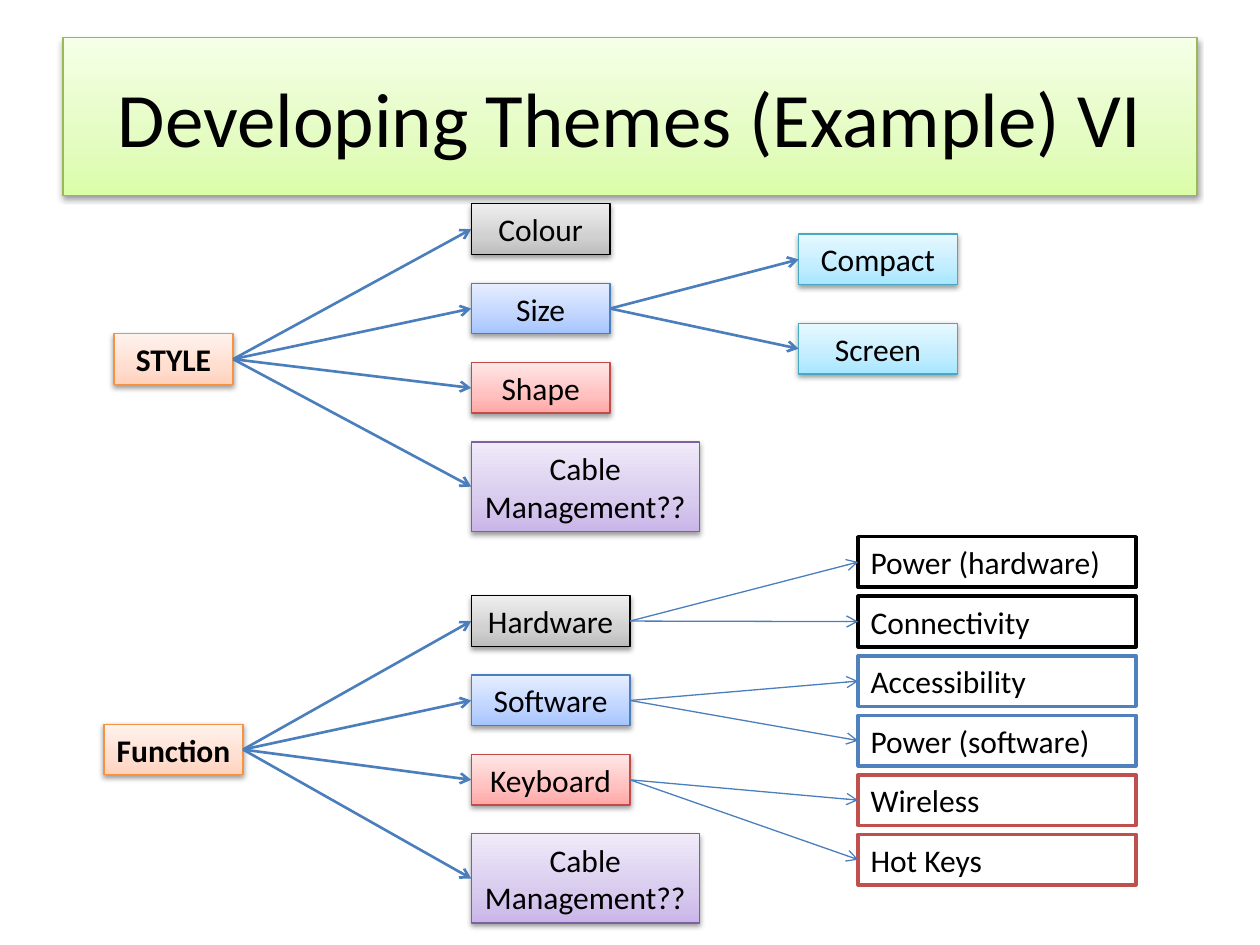
"""Build a slide that maps the themes of style and function as two trees."""
from copy import deepcopy

from lxml.etree import SubElement
from pptx import Presentation
from pptx.dml.color import RGBColor
from pptx.enum.shapes import MSO_CONNECTOR, MSO_SHAPE
from pptx.enum.text import MSO_ANCHOR, MSO_AUTO_SIZE, PP_ALIGN
from pptx.oxml.ns import qn
from pptx.util import Cm, Pt

COLORS = {
    "text": "000000", "arrow": "4B7EBC", "white": "FFFFFF",
    "black line": "000000", "blue line": "4F81BD", "red line": "C0504D",
    "green": ("DAFDA7", "E4FCC2", "F5FFE7", "98B955"),
    "orange": ("FFD2BD", "FFDED0", "FFF2ED", "F69240"),
    "grey": ("BDBDBD", "D1D1D1", "EEEEEE", "000000"),
    "blue": ("A4C4FF", "BFD4FF", "E6EEFF", "4B7EBC"),
    "red": ("FFA6A5", "FFC0BF", "FFE7E7", "BF4C48"),
    "purple": ("C9B5E8", "D8CBEE", "F0EAF9", "7D60A0"),
    "aqua": ("A7E6FF", "C1EDFF", "E7F8FF", "46AAC5"),
}

prs = Presentation()
prs.slide_width, prs.slide_height = Cm(25.4), Cm(19.05)
s = prs.slides.add_slide(prs.slide_layouts[5])


def add_box(text, x, y, w, h=1.02, color="grey", sp=None, size=18,
            bold=False, align=PP_ALIGN.CENTER, wrap=True):
    box = Cm(x), Cm(y), Cm(w), Cm(h)
    if sp is None:
        sp = s.shapes.add_shape(MSO_SHAPE.RECTANGLE, *box)
        sp.text_frame.auto_size = MSO_AUTO_SIZE.SHAPE_TO_FIT_TEXT
    else:
        sp.left, sp.top, sp.width, sp.height = box
    sp.shadow.inherit = False
    if color.endswith("line"):
        sp.fill.solid()
        sp.fill.fore_color.rgb = RGBColor.from_string(COLORS["white"])
        edge, width = COLORS[color], 2
    else:
        *shades, edge = COLORS[color]
        width = 0.75
        sp.fill.gradient()
        sp.fill.gradient_angle = 90
        stops = sp._element.spPr.find(qn("a:gradFill")).find(qn("a:gsLst"))
        stops.append(deepcopy(stops[0]))
        for stop, place, shade in zip(sp.fill.gradient_stops, (0, 0.35, 1), shades):
            stop.position = place
            stop.color.rgb = RGBColor.from_string(shade)
        shadow = SubElement(sp._element.spPr.find(qn("a:effectLst")), qn("a:outerShdw"),
                            blurRad="40000", dist="20000", dir="5400000", rotWithShape="0")
        black = SubElement(shadow, qn("a:srgbClr"), val="000000")
        SubElement(black, qn("a:alpha"), val="38000")
    sp.line.color.rgb = RGBColor.from_string(edge)
    sp.line.width = Pt(width)
    tf = sp.text_frame
    tf.word_wrap = wrap
    tf.vertical_anchor = MSO_ANCHOR.MIDDLE
    p = tf.paragraphs[0]
    p.alignment = align
    r = p.add_run()
    r.text = text
    r.font.name, r.font.size, r.font.bold = "Calibri", Pt(size), bold
    r.font.color.rgb = RGBColor.from_string(COLORS["text"])
    return sp


def add_arrow(start, end, width=1.5):
    c = s.shapes.add_connector(MSO_CONNECTOR.STRAIGHT, 0, 0, 0, 0)
    c.begin_connect(start, 3)
    c.end_connect(end, 1)
    c.line.color.rgb = RGBColor.from_string(COLORS["arrow"])
    c.line.width = Pt(width)
    spPr = c._element.spPr
    SubElement(spPr.find(qn("a:ln")), qn("a:tailEnd"), type="arrow")
    SubElement(spPr, qn("a:effectLst"))


add_box("Developing Themes (Example) VI", 1.27, 0.76, 22.86, 3.18,
        color="green", sp=s.shapes.title, size=44)

trees = [
    ("STYLE", 2.3, 6.73, 2.4, 4.11, 2.8, ["Colour", "Size", "Shape"]),
    ("Function", 2.1, 14.6, 2.8, 12.01, 3.2, ["Hardware", "Software", "Keyboard"]),
]
themes = {}
for root, x, y, w, top, theme_w, names in trees:
    start = add_box(root, x, y, w, color="orange", bold=True, wrap=False)
    for i, (name, color) in enumerate(zip(names, ("grey", "blue", "red"))):
        themes[name] = add_box(name, 9.5, top + 1.6 * i, theme_w, color=color)
        add_arrow(start, themes[name])
    cable = add_box("Cable Management??", 9.5, top + 4.8, 4.6, 1.8, color="purple")
    add_arrow(start, cable)

for i, name in enumerate(("Compact", "Screen")):
    add_arrow(themes["Size"], add_box(name, 16.1, 4.72 + 1.8 * i, 3.2, color="aqua"))

details = [
    ("Power (hardware)", "Hardware", "black line"),
    ("Connectivity", "Hardware", "black line"),
    ("Accessibility", "Software", "blue line"),
    ("Power (software)", "Software", "blue line"),
    ("Wireless", "Keyboard", "red line"),
    ("Hot Keys", "Keyboard", "red line"),
]
for i, (name, theme, color) in enumerate(details):
    sp = add_box(name, 17.3, 10.82 + 1.2 * i, 5.6, color=color, align=PP_ALIGN.LEFT)
    add_arrow(themes[theme], sp, width=0.75)

prs.save("out.pptx")
